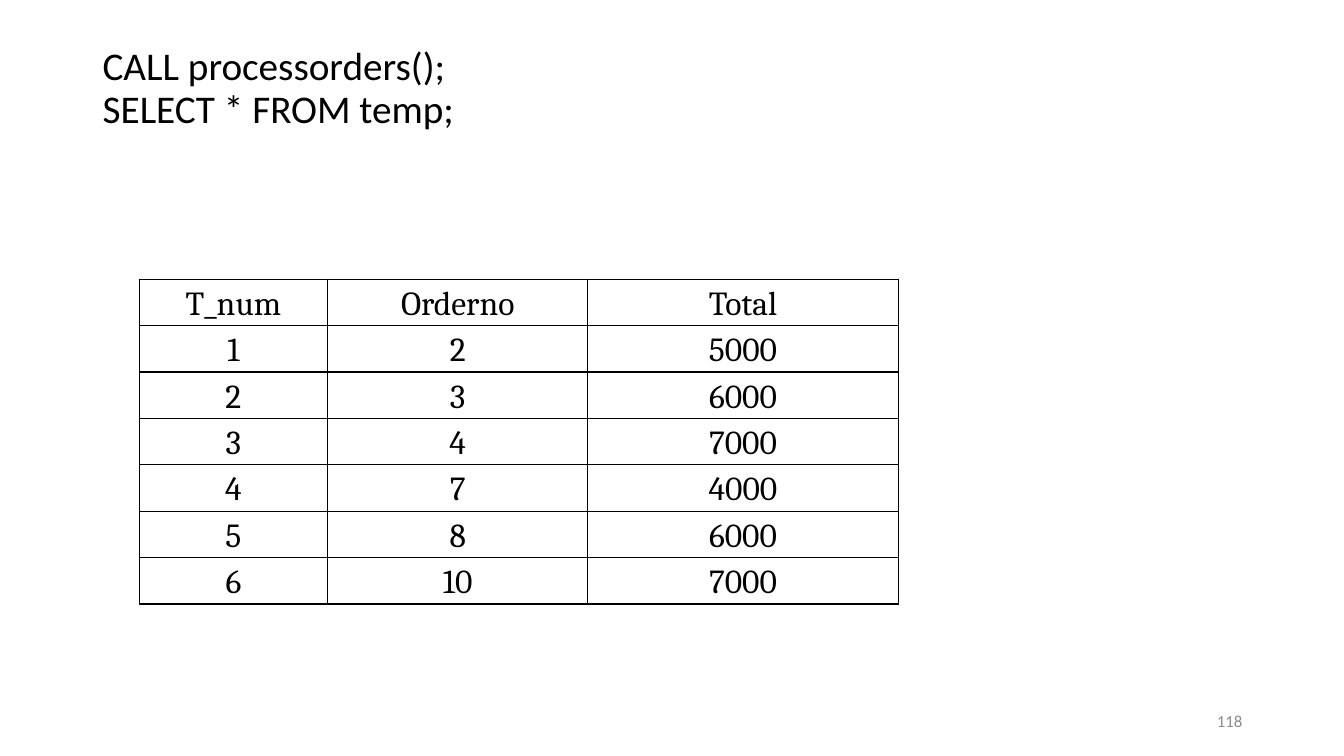
from lxml.etree import SubElement
from pptx import Presentation
from pptx.dml.color import RGBColor
from pptx.enum.text import MSO_ANCHOR, PP_ALIGN
from pptx.oxml.ns import qn
from pptx.util import Inches, Pt

COLORS = {"text": "000000", "border": "000000", "number": "8C8C8C"}
ROWS = [
    ("T_num", "Orderno", "Total"),
    ("1", "2", "5000"),
    ("2", "3", "6000"),
    ("3", "4", "7000"),
    ("4", "7", "4000"),
    ("5", "8", "6000"),
    ("6", "10", "7000"),
]
COLUMN_WIDTHS = [1.87, 2.58, 3.08]
ROW_HEIGHT = 0.44


def style(para, font, size, color, align, spacing=1.0):
    para.font.name = font
    para.font.size = Pt(size)
    para.font.color.rgb = RGBColor.from_string(COLORS[color])
    para.alignment = align
    para.line_spacing = spacing


def add_borders(cell):
    properties = cell._tc.get_or_add_tcPr()
    for side in ("lnL", "lnR", "lnT", "lnB"):
        line = SubElement(properties, qn(f"a:{side}"), w=str(Pt(1)))
        fill = SubElement(line, qn("a:solidFill"))
        SubElement(fill, qn("a:srgbClr"), val=COLORS["border"])


deck = Presentation()
deck.slide_width = Inches(13.33)
deck.slide_height = Inches(7.5)
page = deck.slides.add_slide(deck.slide_layouts[6])

# Title and page number
for text, left, top, width, height, size, color, align, spacing in [
    ("CALL processorders();\vSELECT * FROM temp;",
     0.92, 0.4, 11.5, 0.97, 28, "text", PP_ALIGN.LEFT, 0.9),
    ("118", 9.42, 6.95, 3, 0.4, 12, "number", PP_ALIGN.RIGHT, 1.0),
]:
    box = page.shapes.add_textbox(
        Inches(left), Inches(top), Inches(width), Inches(height))
    frame = box.text_frame
    frame.word_wrap = True
    frame.vertical_anchor = MSO_ANCHOR.MIDDLE
    para = frame.paragraphs[0]
    para.text = text
    style(para, "Calibri", size, color, align, spacing)

# Query result
table = page.shapes.add_table(
    len(ROWS), len(COLUMN_WIDTHS), Inches(1.38), Inches(2.77),
    Inches(sum(COLUMN_WIDTHS)), Inches(ROW_HEIGHT * len(ROWS))).table
table.first_row = False
table.horz_banding = False
for column, width in zip(table.columns, COLUMN_WIDTHS):
    column.width = Inches(width)

for row, values in zip(table.rows, ROWS):
    row.height = Inches(ROW_HEIGHT)
    for cell, value in zip(row.cells, values):
        cell.margin_left = cell.margin_right = Inches(0.07)
        cell.margin_top = cell.margin_bottom = 0
        add_borders(cell)
        cell.fill.background()
        para = cell.text_frame.paragraphs[0]
        para.text = value
        style(para, "Cambria", 24, "text", PP_ALIGN.CENTER, 1.15)

deck.save("out.pptx")
